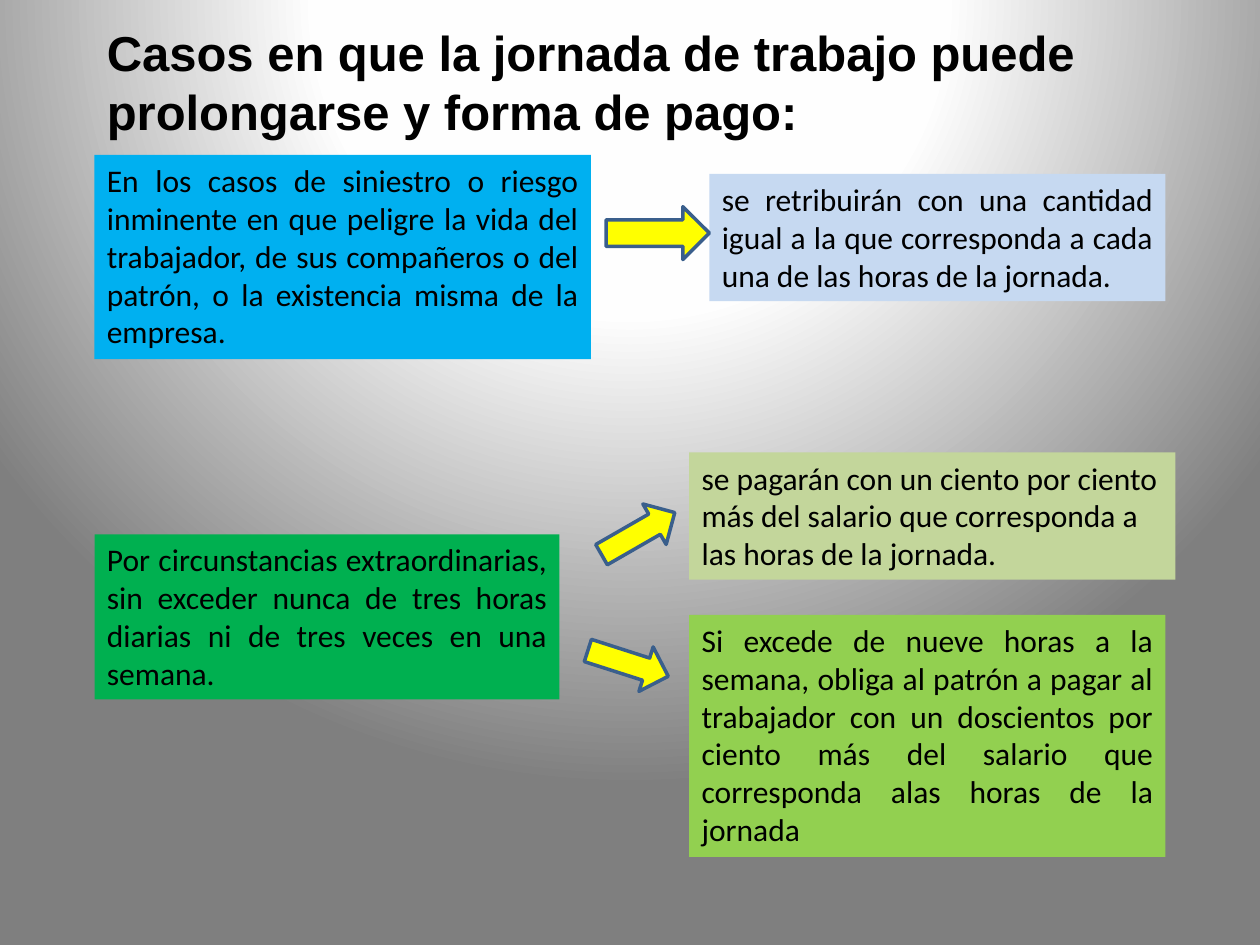
from pptx import Presentation
from pptx.dml.color import RGBColor
from pptx.enum.shapes import MSO_SHAPE
from pptx.enum.text import MSO_AUTO_SIZE, PP_ALIGN
from pptx.oxml import parse_xml
from pptx.oxml.ns import nsdecls, qn
from pptx.util import Inches, Pt

ARROW = MSO_SHAPE.RIGHT_ARROW
GROW = MSO_AUTO_SIZE.SHAPE_TO_FIT_TEXT
LEFT, JUSTIFY = PP_ALIGN.LEFT, PP_ALIGN.JUSTIFY

COLORS = {
    "text": "000000", "risk": "00B0F0", "risk_pay": "C6D9F1",
    "extra": "00B050", "double_pay": "C3D69B", "triple_pay": "92D050",
    "arrow": "FFFF00", "arrow_line": "3A5F8C",
}
BACKGROUND_STOPS = [(0, "FFFFFF"), (40, "FEFEFE"), (100, "7F7F7F")]


def rgb(name):
    """Return the palette colour with the given name."""
    return RGBColor.from_string(COLORS[name])


def set_background(slide):
    """Fill the background with a circular gradient centred above the slide."""
    slide.background.fill.gradient()
    stops = "".join(
        f'<a:gs pos="{pos * 1000}"><a:srgbClr val="{color}"/></a:gs>'
        for pos, color in BACKGROUND_STOPS)
    grad = parse_xml(
        f'<a:gradFill {nsdecls("a")} rotWithShape="1"><a:gsLst>{stops}</a:gsLst>'
        '<a:path path="circle"><a:fillToRect l="50000" t="-80000" r="50000" b="180000"/>'
        '</a:path></a:gradFill>')
    bg = slide.element.find(".//" + qn("p:bgPr"))
    bg.replace(bg.find(qn("a:gradFill")), grad)


def add_text(slide, box, text, size=18, font="Calibri", bold=False, fill=None, align=JUSTIFY):
    """Add a wrapped text box, filled when a colour name is given."""
    sp = slide.shapes.add_textbox(*map(Inches, box))
    if fill:
        sp.fill.solid()
        sp.fill.fore_color.rgb = rgb(fill)
    tf = sp.text_frame
    tf.word_wrap = True
    tf.auto_size = GROW
    tf.text = text
    p = tf.paragraphs[0]
    p.alignment = align
    r = p.runs[0]
    r.font.size = Pt(size)
    r.font.name = font
    r.font.bold = bold
    r.font.color.rgb = rgb("text")


def add_arrow(slide, box, rotation=0):
    """Add an outlined block arrow turned by the given degrees."""
    sp = slide.shapes.add_shape(ARROW, *map(Inches, box))
    sp.rotation = rotation
    sp.shadow.inherit = False
    sp.fill.solid()
    sp.fill.fore_color.rgb = rgb("arrow")
    sp.line.color.rgb = rgb("arrow_line")
    sp.line.width = Pt(2)


def add_risk_case(slide, x, y):
    """Place the emergency case, its arrow and its pay rule."""
    add_text(slide, (x, y, 3.94, 1.62),
             "En los casos de siniestro o riesgo inminente en que peligre la vida del "
             "trabajador, de sus compañeros o del patrón, o la existencia misma de la empresa.",
             fill="risk")
    add_text(slide, (x + 4.88, y + 0.15, 3.62, 1.01),
             "se retribuirán con una cantidad igual a la que corresponda a cada una de "
             "las horas de la jornada.", fill="risk_pay")
    add_arrow(slide, (x + 4.06, y + 0.41, 0.82, 0.42))


def add_extra_case(slide, x, y):
    """Place the overtime case, its two arrows and its two pay rules."""
    add_text(slide, (x, y + 0.65, 3.69, 1.31),
             "Por circunstancias extraordinarias, sin exceder nunca de tres horas "
             "diarias ni de tres veces en una semana.", fill="extra")
    add_text(slide, (x + 4.72, y, 3.86, 1.01),
             "se pagarán con un ciento por ciento más del salario que corresponda a "
             "las horas de la jornada.", fill="double_pay", align=LEFT)
    add_text(slide, (x + 4.72, y + 1.29, 3.78, 1.92),
             "Si excede de nueve horas a la semana, obliga al patrón a pagar al "
             "trabajador con un doscientos por ciento más del salario que corresponda "
             "alas horas de la jornada", fill="triple_pay")
    add_arrow(slide, (x + 3.98, y + 0.46, 0.67, 0.37), 330.1)
    add_arrow(slide, (x + 3.9, y + 1.49, 0.67, 0.37), 17.8)


def main():
    """Build and save the slide."""
    prs = Presentation()
    prs.slide_width, prs.slide_height = Inches(10), Inches(7.5)
    slide = prs.slides.add_slide(prs.slide_layouts[6])
    set_background(slide)
    add_text(slide, (0.75, 0.13, 8.9, 1.51),
             "Casos en que la jornada de trabajo puede prolongarse y forma de pago:",
             size=28, font="Arial", bold=True, align=LEFT)
    add_risk_case(slide, 0.75, 1.23)
    add_extra_case(slide, 0.75, 3.59)
    prs.save("out.pptx")


if __name__ == "__main__":
    main()
